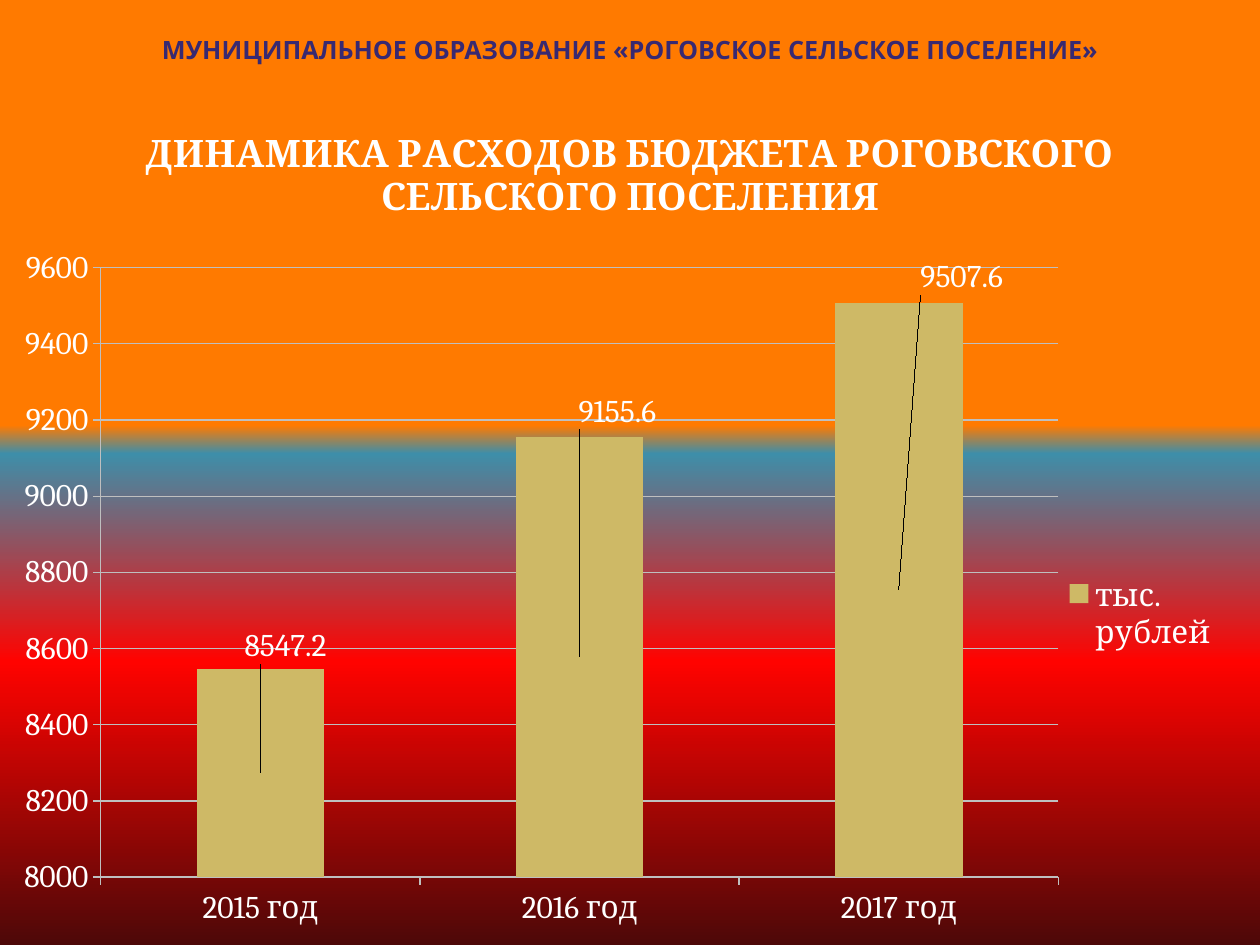
from lxml import etree
from pptx import Presentation
from pptx.chart.data import CategoryChartData
from pptx.dml.color import RGBColor
from pptx.enum.chart import XL_CHART_TYPE, XL_LABEL_POSITION, XL_LEGEND_POSITION, XL_TICK_MARK
from pptx.enum.text import MSO_ANCHOR, PP_ALIGN
from pptx.oxml import parse_xml
from pptx.oxml.ns import nsdecls, qn
from pptx.util import Inches, Pt

STACKED = XL_CHART_TYPE.COLUMN_STACKED
LABEL_CENTER = XL_LABEL_POSITION.CENTER
LEGEND_RIGHT = XL_LEGEND_POSITION.RIGHT
TICK_OUTSIDE = XL_TICK_MARK.OUTSIDE
MIDDLE = MSO_ANCHOR.MIDDLE
CENTER = PP_ALIGN.CENTER

GRADIENT = [(45, "FF7A00"), (48, "3E8EA9"), (70, "FF0300"), (100, "4D0808")]
WHITE, GRID, GOLD, INDIGO = "FFFFFF", "BFBFBF", "CEB966", "382971"


def format_font(font, color, **values):
    font.color.rgb = RGBColor.from_string(color)
    for name, value in values.items():
        setattr(font, name, value)


def manual_layout(**values):
    """Chart layout element; lengths are fractions of the chart."""
    layout = parse_xml(f"<c:layout {nsdecls('c')}><c:manualLayout/></c:layout>")
    for name, value in values.items():
        etree.SubElement(layout[0], qn(f"c:{name}")).set("val", str(value))
    return layout


presentation = Presentation()
presentation.slide_width = Inches(10)
presentation.slide_height = Inches(7.5)
slide = presentation.slides.add_slide(presentation.slide_layouts[5])

# Background: four stops, top to bottom
fill = slide.background.fill
fill.gradient()
stops = "".join(
    f'<a:gs pos="{position * 1000}"><a:srgbClr val="{color}"/></a:gs>'
    for position, color in GRADIENT
)
gradient = parse_xml(
    f'<a:gradFill {nsdecls("a")} rotWithShape="1"><a:gsLst>{stops}</a:gsLst>'
    '<a:lin ang="5400000" scaled="0"/></a:gradFill>'
)
background = slide.element.find(".//" + qn("p:bgPr"))
background.replace(background.find(qn("a:gradFill")), gradient)

# Slide title
title = slide.shapes.title
title.left, title.top, title.width, title.height = map(Inches, (0.5, 0.3, 9, 0.4))
frame = title.text_frame
frame.text = "МУНИЦИПАЛЬНОЕ ОБРАЗОВАНИЕ «РОГОВСКОЕ СЕЛЬСКОЕ ПОСЕЛЕНИЕ»"
frame.vertical_anchor = MIDDLE
frame.margin_top, frame.margin_bottom = 0, Inches(0.22)
paragraph = frame.paragraphs[0]
paragraph.alignment = CENTER
format_font(paragraph.runs[0].font, INDIGO, name="Noto Sans", size=Pt(14.4), bold=True)

# Expenditure chart
data = CategoryChartData()
data.categories = ["2015 год", "2016 год", "2017 год"]
data.add_series("тыс. рублей", [8547.2, 9155.6, 9507.6])
chart = slide.shapes.add_chart(
    STACKED, Inches(0), Inches(0.78), Inches(10), Inches(6.72), data
).chart
format_font(chart.font, WHITE, name="Cambria", size=Pt(18))

chart.has_title = True
chart_title = chart.chart_title.text_frame
chart_title.text = "ДИНАМИКА РАСХОДОВ БЮДЖЕТА РОГОВСКОГО СЕЛЬСКОГО ПОСЕЛЕНИЯ"
format_font(chart_title.paragraphs[0].runs[0].font, WHITE,
            name="Cambria", size=Pt(21.6), bold=True)

chart.has_legend = True
legend = chart.legend
legend.position = LEGEND_RIGHT
legend.include_in_layout = False
format_font(legend.font, WHITE, name="Cambria", size=Pt(18))
legend_position = legend._element.find(qn("c:legendPos"))
for old_layout in legend._element.findall(qn("c:layout")):
    legend._element.remove(old_layout)
legend_position.addnext(
    manual_layout(xMode="edge", yMode="edge", x=0.84, y=0.56, w=0.13, h=0.1)
)

plot = chart.plots[0]
plot.gap_width = 150
plot.overlap = 100
plot.vary_by_categories = False
plot_area = chart._chartSpace.chart.plotArea
for old_layout in plot_area.findall(qn("c:layout")):
    plot_area.remove(old_layout)
plot_area.insert(0, manual_layout(layoutTarget="inner", xMode="edge", yMode="edge",
                                  x=0.08, y=0.2, w=0.76, h=0.72))

value_axis = chart.value_axis
value_axis.minimum_scale = 8000
value_axis.maximum_scale = 9600
value_axis.major_unit = 200
value_axis.has_major_gridlines = True
for axis in (chart.category_axis, value_axis):
    axis.major_tick_mark = TICK_OUTSIDE
    format_font(axis.tick_labels.font, WHITE, name="Cambria", size=Pt(18))
for line in (chart.category_axis.format.line, value_axis.format.line,
             value_axis.major_gridlines.format.line):
    line.color.rgb = RGBColor.from_string(GRID)
    line.width = Pt(0.75)

series = plot.series[0]
series.format.fill.solid()
series.format.fill.fore_color.rgb = RGBColor.from_string(GOLD)
labels = series.data_labels
labels.show_value = True
format_font(labels.font, WHITE, name="Cambria", size=Pt(18))

# Labels are lifted from the middle of each column to above its top
label_shifts = [(0.02, -0.15), (0.03, -0.29), (0.05, -0.37)]
for index, (shift_x, shift_y) in enumerate(label_shifts):
    label = series.points[index].data_label
    format_font(label.font, WHITE, name="Cambria", size=Pt(18))
    label.position = LABEL_CENTER
    label_element = labels._element.findall(qn("c:dLbl"))[index]
    label_element.find(qn("c:idx")).addnext(manual_layout(x=shift_x, y=shift_y))

presentation.save("out.pptx")
